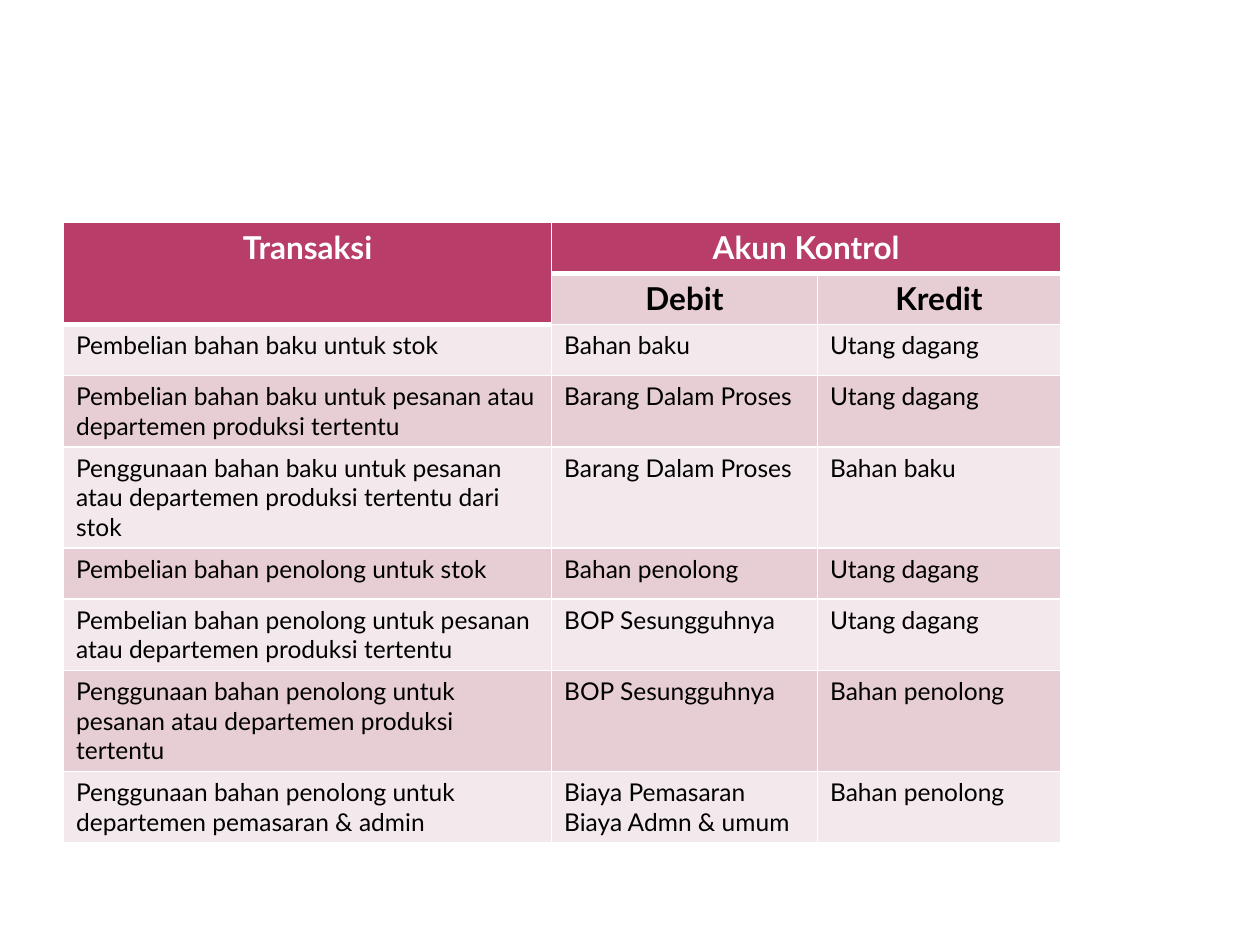
from lxml import etree
from pptx import Presentation
from pptx import util as u
from pptx.dml.color import RGBColor
from pptx.enum import text
from pptx.oxml import ns

WHITE, BLACK = "FFFFFF", "000000"
ROSE, PINK, PALE = "B83D68", "E6CED4", "F3E8EB"


def border(cell, side, width, colour=WHITE):
    line = etree.SubElement(cell._tc.get_or_add_tcPr(), ns.qn(f"a:ln{side}"),
                            w=str(u.Pt(width)))
    fill = etree.SubElement(line, ns.qn("a:solidFill"))
    etree.SubElement(fill, ns.qn("a:srgbClr"), val=colour)


def write(cell, words, size=14, colour=BLACK, bold=False,
          align=text.PP_ALIGN.LEFT):
    cell.text = words
    for paragraph in cell.text_frame.paragraphs:
        paragraph.alignment = align
        for run in paragraph.runs:
            run.font.name = "Lato"
            run.font.size = u.Pt(size)
            run.font.bold = bold
            run.font.color.rgb = RGBColor.from_string(colour)


entries = [
    ("Pembelian bahan baku untuk stok", "Bahan baku", "Utang dagang"),
    ("Pembelian bahan baku untuk pesanan atau departemen produksi tertentu",
     "Barang Dalam Proses", "Utang dagang"),
    ("Penggunaan bahan baku untuk pesanan atau departemen produksi tertentu dari stok",
     "Barang Dalam Proses", "Bahan baku"),
    ("Pembelian bahan penolong untuk stok", "Bahan penolong", "Utang dagang"),
    ("Pembelian bahan penolong untuk pesanan atau departemen produksi tertentu",
     "BOP Sesungguhnya", "Utang dagang"),
    ("Penggunaan bahan penolong untuk pesanan atau departemen produksi tertentu",
     "BOP Sesungguhnya", "Bahan penolong"),
    ("Penggunaan bahan penolong untuk departemen pemasaran & admin",
     "Biaya Pemasaran\nBiaya Admn & umum", "Bahan penolong"),
]
headings = [("Transaksi", "Akun Kontrol", ""), ("", "Debit", "Kredit")]
rows = headings + entries
column_widths = [9.84, 5.36, 4.9]
row_height = 1.03

prs = Presentation()
prs.slide_width, prs.slide_height = u.Cm(25.4), u.Cm(19.05)
slide = prs.slides.add_slide(prs.slide_layouts[6])

# Journal table
journal = slide.shapes.add_table(
    len(rows), len(column_widths), u.Cm(1.28), u.Cm(4.48),
    u.Cm(sum(column_widths)), u.Cm(row_height * len(rows))).table
for column, width in zip(journal.columns, column_widths):
    column.width = u.Cm(width)
for row in journal.rows:
    row.height = u.Cm(row_height)

# Headings that span cells
journal.cell(0, 0).merge(journal.cell(1, 0))
journal.cell(0, 1).merge(journal.cell(0, 2))

# Cell text, borders and banded fills
for r, row in enumerate(rows):
    for c, words in enumerate(row):
        cell = journal.cell(r, c)
        in_header = r == 0 or (r, c) == (1, 0)
        below_header = (r == 1 and c > 0) or (r, c) == (2, 0)
        if words and r < len(headings):
            write(cell, words, size=18, bold=True,
                  colour=WHITE if in_header else BLACK,
                  align=text.PP_ALIGN.CENTER)
        elif words:
            write(cell, words)
        border(cell, "L", 1)
        border(cell, "R", 1)
        border(cell, "T", 3 if below_header else 1)
        border(cell, "B", 3 if in_header else 1)
        cell.fill.solid()
        cell.fill.fore_color.rgb = RGBColor.from_string(
            ROSE if in_header else PINK if r % 2 else PALE)

prs.save("out.pptx")
